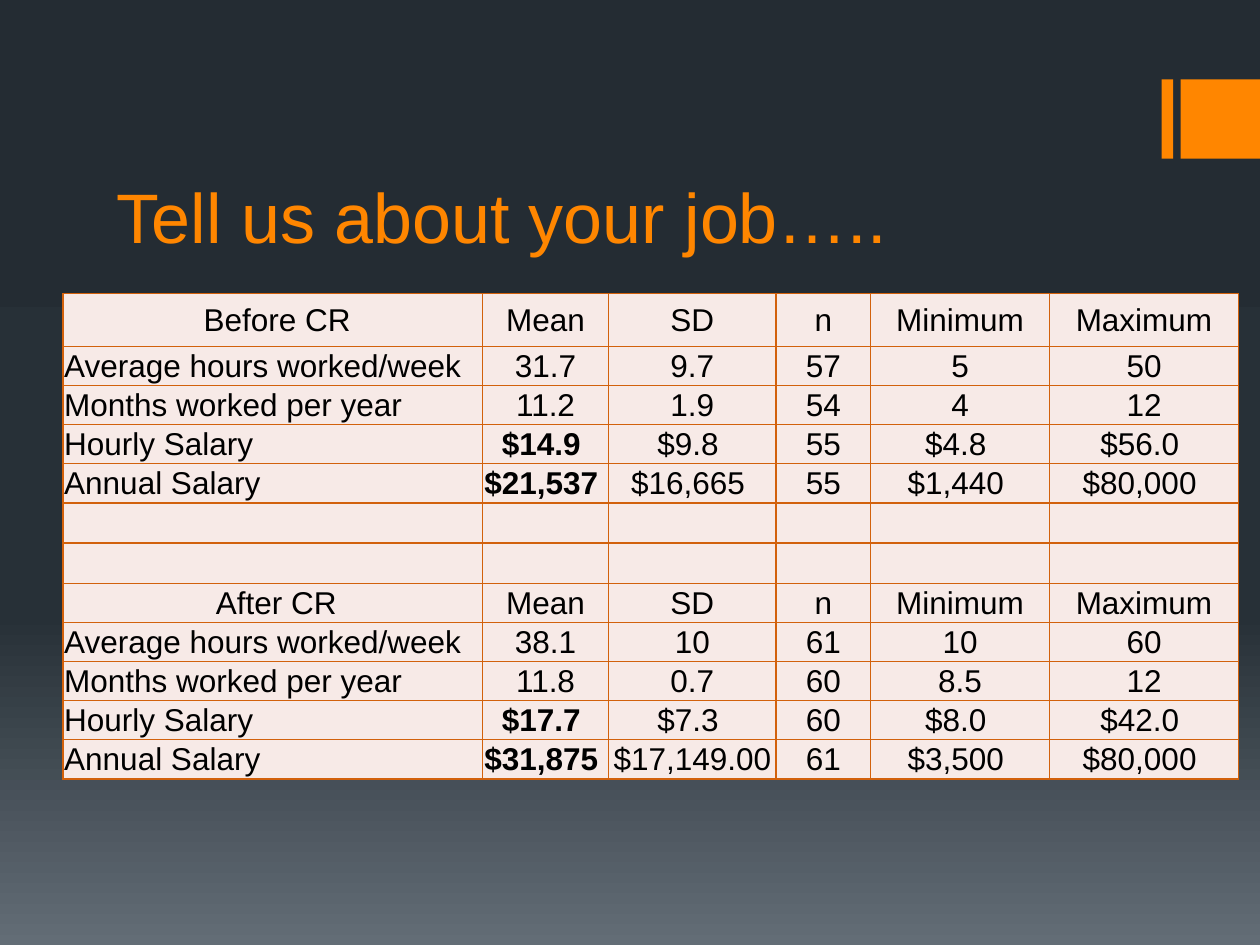
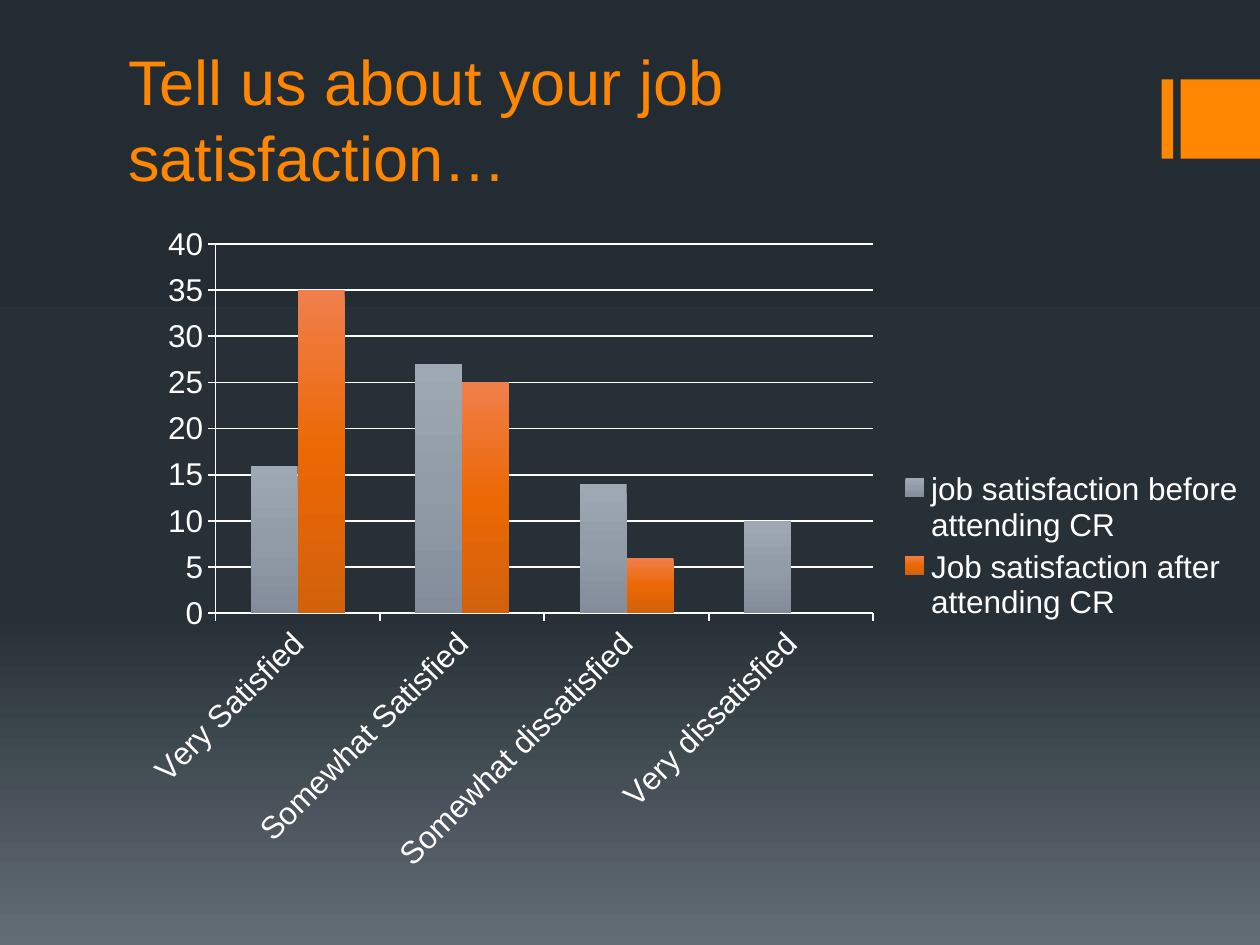
from copy import deepcopy
from dataclasses import dataclass

from lxml import etree
from pptx import Presentation
from pptx.chart.data import CategoryChartData
from pptx.dml.color import RGBColor
from pptx.enum.chart import XL_CHART_TYPE, XL_LEGEND_POSITION, XL_TICK_MARK
from pptx.enum.shapes import MSO_SHAPE
from pptx.enum.text import MSO_ANCHOR, PP_ALIGN
from pptx.oxml.ns import qn
from pptx.util import Inches, Pt

RECTANGLE = MSO_SHAPE.RECTANGLE
LEFT, CENTER = PP_ALIGN.LEFT, PP_ALIGN.CENTER
MIDDLE, BOTTOM = MSO_ANCHOR.MIDDLE, MSO_ANCHOR.BOTTOM
CLUSTERED = XL_CHART_TYPE.COLUMN_CLUSTERED
LEGEND_RIGHT = XL_LEGEND_POSITION.RIGHT
TICK_OUTSIDE = XL_TICK_MARK.OUTSIDE
BLANK_LAYOUT = 6
DOWNWARD = 270


@dataclass(frozen=True)
class Theme:
    font: str = "Arial"
    accent: str = "FF8600"
    border: str = "D2610C"
    cell: str = "F7EAE7"
    dark_text: str = "000000"
    light_text: str = "FFFFFF"
    background: tuple = ((0, "242C33"), (0.65, "273037"), (1, "636D76"))
    bars: tuple = (
        ((0, "9FA9B4"), (0.5, "929CA7"), (1, "838D9B")),
        ((0, "F07F4C"), (0.5, "EC6804"), (1, "D2610C")),
    )
    title_size: int = 40
    long_title_size: int = 36
    body_size: int = 18


def apply(target, values):
    for name, value in values.items():
        setattr(target, name, value)


def paint_gradient(fill, owner, stops):
    """Fill with a top-to-bottom gradient; owner is the XML that holds the fill."""
    fill.gradient()
    fill.gradient_angle = DOWNWARD
    stop_list = owner.find(".//" + qn("a:gsLst"))
    while len(stop_list) < len(stops):
        stop_list.append(deepcopy(stop_list[0]))
    for stop, (position, color) in zip(fill.gradient_stops, stops):
        stop.position = position
        stop.color.rgb = RGBColor.from_string(color)


def place_in_chart(element, index, values):
    """Give a chart part a manual layout, in fractions of the chart."""
    for old in element.findall(qn("c:layout")):
        element.remove(old)
    layout = etree.Element(qn("c:layout"))
    manual = etree.SubElement(layout, qn("c:manualLayout"))
    for name, value in values.items():
        etree.SubElement(manual, qn("c:" + name), val=str(value))
    element.insert(index, layout)


class SlideBuilder:
    def __init__(self, deck, theme):
        self.deck = deck
        self.theme = theme
        self.page = None

    def new_page(self):
        self.page = self.deck.slides.add_slide(self.deck.slide_layouts[BLANK_LAYOUT])
        paint_gradient(self.page.background.fill, self.page._element, self.theme.background)
        for left, width in ((9.22, 0.09), (9.37, 0.63)):
            self.accent_block(left, 0.63, width, 0.63)

    def accent_block(self, left, top, width, height):
        block = self.page.shapes.add_shape(RECTANGLE, *map(Inches, (left, top, width, height)))
        block.shadow.inherit = False
        block.fill.solid()
        block.fill.fore_color.rgb = RGBColor.from_string(self.theme.accent)
        block.line.fill.background()

    def style_font(self, font, size, color, bold=False):
        apply(font, {"name": self.theme.font, "size": Pt(size), "bold": bold})
        font.color.rgb = RGBColor.from_string(color)

    def title(self, text, left, top, size):
        box = self.page.shapes.add_textbox(*map(Inches, (left, top, 8, 1.26)))
        apply(box.text_frame, {"word_wrap": True, "vertical_anchor": BOTTOM})
        span = box.text_frame.paragraphs[0].add_run()
        span.text = text
        self.style_font(span.font, size, self.theme.accent)

    def table(self, left, top, widths, heights, rows):
        frame = self.page.shapes.add_table(
            len(rows), len(widths),
            *map(Inches, (left, top, sum(widths), sum(heights))))
        table = frame.table
        apply(table, {"first_row": False, "horz_banding": False})
        for column, width in zip(table.columns, widths):
            column.width = Inches(width)
        for row, height, texts in zip(table.rows, heights, rows):
            row.height = Inches(height)
            is_header = "Mean" in texts
            for index, (cell, text) in enumerate(zip(row.cells, texts)):
                is_mean_pay = index == 1 and text.startswith("$")
                align = CENTER if index or is_header else LEFT
                self.fill_cell(cell, text, align, is_mean_pay)

    def fill_cell(self, cell, text, align, bold):
        inset = Inches(0.01)
        apply(cell, {"margin_left": inset, "margin_right": inset, "margin_top": inset,
                     "margin_bottom": 0, "vertical_anchor": MIDDLE})
        para = cell.text_frame.paragraphs[0]
        para.alignment = align
        self.style_font(para.font, self.theme.body_size, self.theme.dark_text, bold)
        if text:
            span = para.add_run()
            span.text = text
            self.style_font(span.font, self.theme.body_size, self.theme.dark_text, bold)
        self.border_cell(cell)
        cell.fill.solid()
        cell.fill.fore_color.rgb = RGBColor.from_string(self.theme.cell)

    def border_cell(self, cell):
        properties = cell._tc.get_or_add_tcPr()
        for side in ("a:lnL", "a:lnR", "a:lnT", "a:lnB"):
            line = etree.SubElement(properties, qn(side), w=str(Pt(1)))
            solid = etree.SubElement(line, qn("a:solidFill"))
            etree.SubElement(solid, qn("a:srgbClr"), val=self.theme.border)

    def column_chart(self, left, top, width, height, categories, series):
        data = CategoryChartData()
        data.categories = categories
        for name, values in series.items():
            data.add_series(name, values)
        chart = self.page.shapes.add_chart(
            CLUSTERED, *map(Inches, (left, top, width, height)), data).chart
        self.style_font(chart.font, self.theme.body_size, self.theme.light_text)
        apply(chart, {"has_title": False, "has_legend": True})
        apply(chart.legend, {"position": LEGEND_RIGHT, "include_in_layout": False})

        plot = chart.plots[0]
        apply(plot, {"gap_width": 150, "overlap": 0, "vary_by_categories": False})
        for bars, stops in zip(plot.series, self.theme.bars):
            paint_gradient(bars.format.fill, bars._element, stops)
            bars.invert_if_negative = False
        self.style_axes(chart)

        place_in_chart(chart._chartSpace.chart.plotArea, 0, {
            "layoutTarget": "inner", "xMode": "edge", "yMode": "edge",
            "x": 0.08, "y": 0.05, "w": 0.58, "h": 0.55})
        place_in_chart(chart.legend._element, 1, {
            "xMode": "edge", "yMode": "edge",
            "x": 0.68, "y": 0.38, "w": 0.31, "h": 0.24})

    def style_axes(self, chart):
        values, categories = chart.value_axis, chart.category_axis
        apply(values, {"minimum_scale": 0, "maximum_scale": 40, "major_unit": 5,
                       "has_major_gridlines": True})
        for axis in (values, categories):
            axis.major_tick_mark = TICK_OUTSIDE
            self.style_font(axis.tick_labels.font, self.theme.body_size, self.theme.light_text)
        for part in (values, categories, values.major_gridlines):
            part.format.line.width = Pt(1)
            part.format.line.color.rgb = RGBColor.from_string(self.theme.light_text)
        slant = categories._element.find(qn("c:txPr")).find(qn("a:bodyPr"))
        slant.set("rot", str(-45 * 60000))


def build_job_page(builder):
    builder.new_page()
    builder.title("Tell us about your job…..", 0.83, 0.83, builder.theme.title_size)
    measures = ("Mean", "SD", "n", "Minimum", "Maximum")
    blank = ("",) * 6
    rows = [
        (" Before CR", *measures),
        ("Average hours worked/week", "31.7", "9.7", "57", "5", "50"),
        ("Months worked per year", "11.2", "1.9", "54", "4", "12"),
        ("Hourly Salary", "$14.9 ", "$9.8 ", "55", "$4.8 ", "$56.0 "),
        ("Annual Salary", "$21,537 ", "$16,665 ", "55", "$1,440 ", "$80,000 "),
        blank,
        blank,
        (" After CR", *measures),
        ("Average hours worked/week", "38.1", "10", "61", "10", "60"),
        ("Months worked per year", "11.8", "0.7", "60", "8.5", "12"),
        ("Hourly Salary", "$17.7 ", "$7.3 ", "60", "$8.0 ", "$42.0 "),
        ("Annual Salary", "$31,875 ", "$17,149.00 ", "61", "$3,500 ", "$80,000 "),
    ]
    heights = [0.42] + [0.29] * 4 + [0.32] * 2 + [0.29] * 5
    builder.table(0.5, 2.33, (3.33, 1, 1.33, 0.75, 1.42, 1.5), heights, rows)


def build_satisfaction_page(builder):
    builder.new_page()
    builder.title("Tell us about your job satisfaction…", 0.92, 0.33,
                  builder.theme.long_title_size)
    builder.column_chart(
        0.99, 1.67, 9, 5.33,
        ("Very Satisfied", "Somewhat Satisfied", "Somewhat dissatisfied", "Very dissatisfied"),
        {"job satisfaction before attending CR": (16, 27, 14, 10),
         "Job satisfaction after attending CR": (35, 25, 6, 0)})


def main():
    deck = Presentation()
    apply(deck, {"slide_width": Inches(10), "slide_height": Inches(7.5)})
    builder = SlideBuilder(deck, Theme())
    build_job_page(builder)
    build_satisfaction_page(builder)
    deck.save("out.pptx")


if __name__ == "__main__":
    main()
